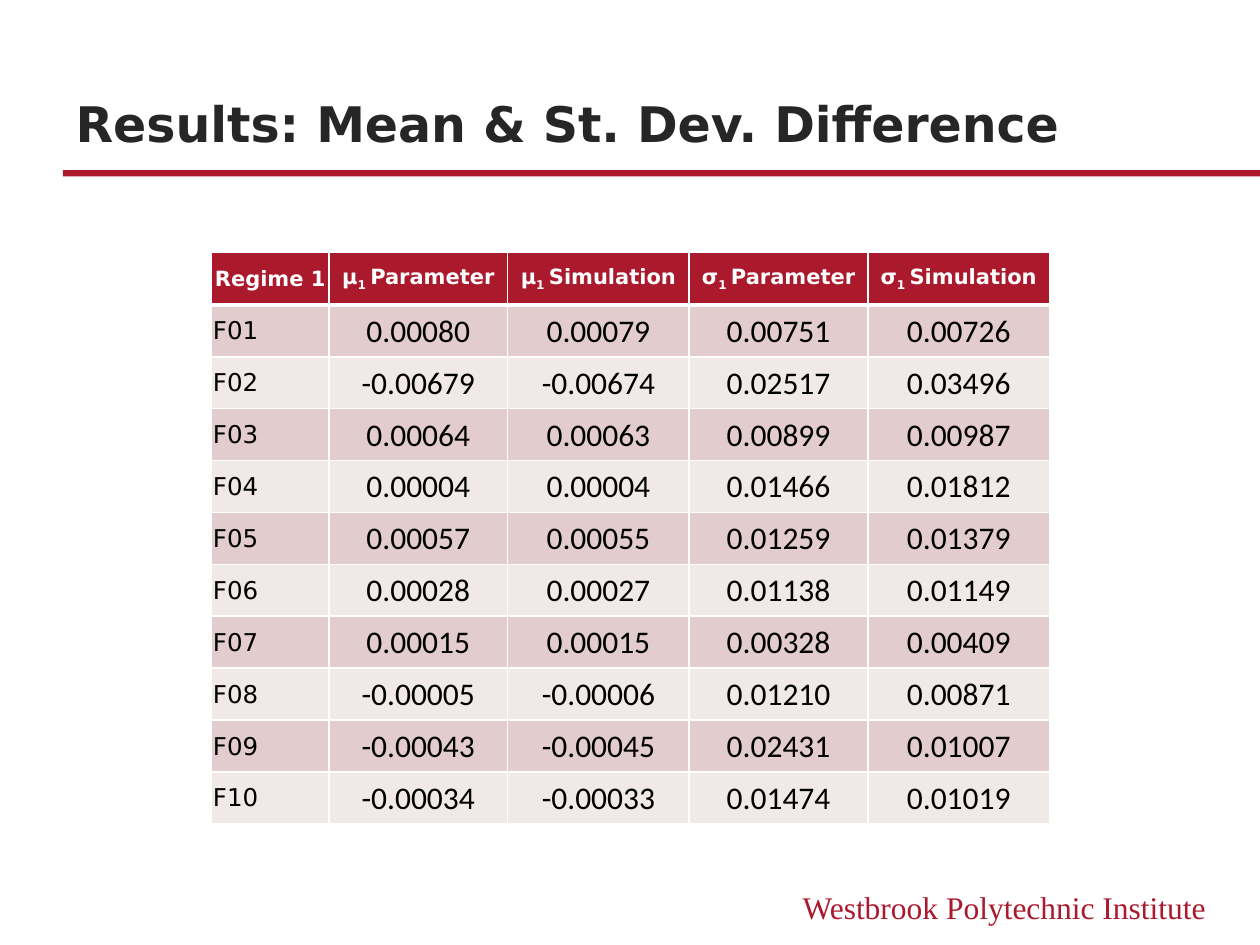
from lxml import etree
from pptx import Presentation
from pptx import util as u
from pptx.dml.color import RGBColor
from pptx.enum import shapes, text
from pptx.oxml.ns import qn

CRIMSON = RGBColor(0xAB, 0x19, 0x2D)
CHARCOAL = RGBColor(0x26, 0x26, 0x26)
BLACK = RGBColor(0, 0, 0)
WHITE = RGBColor(0xFF, 0xFF, 0xFF)
BANDS = (RGBColor(0xE2, 0xCC, 0xCD), RGBColor(0xF1, 0xE8, 0xE8))

HEADERS = [("Regime 1",), ("μ", "1 ", "Parameter"), ("μ", "1 ", "Simulation"),
           ("σ", "1 ", "Parameter"), ("σ", "1 ", "Simulation")]
RESULTS = [
    ("F01", "0.00080", "0.00079", "0.00751", "0.00726"),
    ("F02", "-0.00679", "-0.00674", "0.02517", "0.03496"),
    ("F03", "0.00064", "0.00063", "0.00899", "0.00987"),
    ("F04", "0.00004", "0.00004", "0.01466", "0.01812"),
    ("F05", "0.00057", "0.00055", "0.01259", "0.01379"),
    ("F06", "0.00028", "0.00027", "0.01138", "0.01149"),
    ("F07", "0.00015", "0.00015", "0.00328", "0.00409"),
    ("F08", "-0.00005", "-0.00006", "0.01210", "0.00871"),
    ("F09", "-0.00043", "-0.00045", "0.02431", "0.01007"),
    ("F10", "-0.00034", "-0.00033", "0.01474", "0.01019"),
]
COLUMN_WIDTHS = (0.93, 1.42, 1.44, 1.42, 1.44)
HEADER_HEIGHT = 0.42
TABLE_HEIGHT = 4.54


def inches(*lengths):
    return [u.Inches(length) for length in lengths]


class SlideBuilder:
    """Holds the style and the current slide."""

    heading_font = "DejaVu Sans"
    number_font = "Calibri"
    footer_font = "Times New Roman"

    def __init__(self, slide):
        self.slide = slide

    def style(self, paragraph, name, size, color, bold=False,
              align=text.PP_ALIGN.LEFT):
        paragraph.alignment = align
        font = paragraph.font
        font.name, font.size, font.bold = name, u.Pt(size), bold
        font.color.rgb = color

    def title(self, wording, box):
        shape = self.slide.shapes.title
        shape.left, shape.top, shape.width, shape.height = inches(*box)
        shape.text_frame.text = wording
        shape.text_frame.vertical_anchor = text.MSO_ANCHOR.BOTTOM
        self.style(shape.text_frame.paragraphs[0], self.heading_font, 28,
                   CHARCOAL, bold=True)

    def bar(self, box):
        shape = self.slide.shapes.add_shape(
            shapes.MSO_SHAPE.RECTANGLE, *inches(*box))
        shape.shadow.inherit = False
        shape.fill.solid()
        shape.fill.fore_color.rgb = CRIMSON
        shape.line.fill.background()

    def footer(self, wording, box):
        frame = self.slide.shapes.add_textbox(*inches(*box)).text_frame
        frame.word_wrap = True
        frame.text = wording
        self.style(frame.paragraphs[0], self.footer_font, 18, CRIMSON,
                   align=text.PP_ALIGN.RIGHT)

    def borders(self, cell, top=1, bottom=1):
        properties = cell._tc.get_or_add_tcPr()
        for side, width in (("L", 1), ("R", 1), ("T", top), ("B", bottom)):
            line = etree.SubElement(properties, qn(f"a:ln{side}"),
                                    w=str(u.Pt(width)))
            fill = etree.SubElement(line, qn("a:solidFill"))
            etree.SubElement(fill, qn("a:srgbClr"), val=str(WHITE))

    def cell(self, cell, parts, fill, **border_widths):
        self.borders(cell, **border_widths)
        cell.fill.solid()
        cell.fill.fore_color.rgb = fill
        cell.vertical_anchor = text.MSO_ANCHOR.MIDDLE
        cell.margin_left = cell.margin_top = cell.margin_right = u.Inches(0.01)
        cell.margin_bottom = 0
        paragraph = cell.text_frame.paragraphs[0]
        for index, part in enumerate(parts):
            run = paragraph.add_run()
            run.text = part
            if index == 1:  # the regime number is a subscript
                run.font._element.set("baseline", "-25000")
        return paragraph

    def table(self, headers, rows, left, top):
        table = self.slide.shapes.add_table(
            len(rows) + 1, len(headers),
            *inches(left, top, sum(COLUMN_WIDTHS), TABLE_HEIGHT)).table
        for column, width in zip(table.columns, COLUMN_WIDTHS):
            column.width = u.Inches(width)
        for row in table.rows:
            row.height = u.Inches((TABLE_HEIGHT - HEADER_HEIGHT) / len(rows))
        table.rows[0].height = u.Inches(HEADER_HEIGHT)

        # Header row
        center = text.PP_ALIGN.CENTER
        for column, parts in enumerate(headers):
            paragraph = self.cell(table.cell(0, column), parts, CRIMSON, bottom=3)
            self.style(paragraph, self.heading_font, 12, WHITE, True, center)

        # Banded result rows
        for number, values in enumerate(rows, start=1):
            for column, value in enumerate(values):
                paragraph = self.cell(
                    table.cell(number, column), (value,),
                    BANDS[(number - 1) % 2], top=3 if number == 1 else 1)
                if column == 0:
                    self.style(paragraph, self.heading_font, 14, BLACK)
                else:
                    self.style(paragraph, self.number_font, 18, BLACK, align=center)


def main():
    presentation = Presentation()
    presentation.slide_width, presentation.slide_height = inches(10, 7.5)
    title_only = presentation.slide_layouts[5]
    builder = SlideBuilder(presentation.slides.add_slide(title_only))

    builder.bar((0.5, 1.35, 9.5, 0.05))
    builder.footer("Westbrook Polytechnic Institute", (6, 7, 3.67, 0.4))
    builder.title("Results: Mean & St. Dev. Difference", (0.5, 0.38, 9, 0.88))
    builder.table(HEADERS, RESULTS, 1.68, 2)

    presentation.save("out.pptx")


if __name__ == "__main__":
    main()
